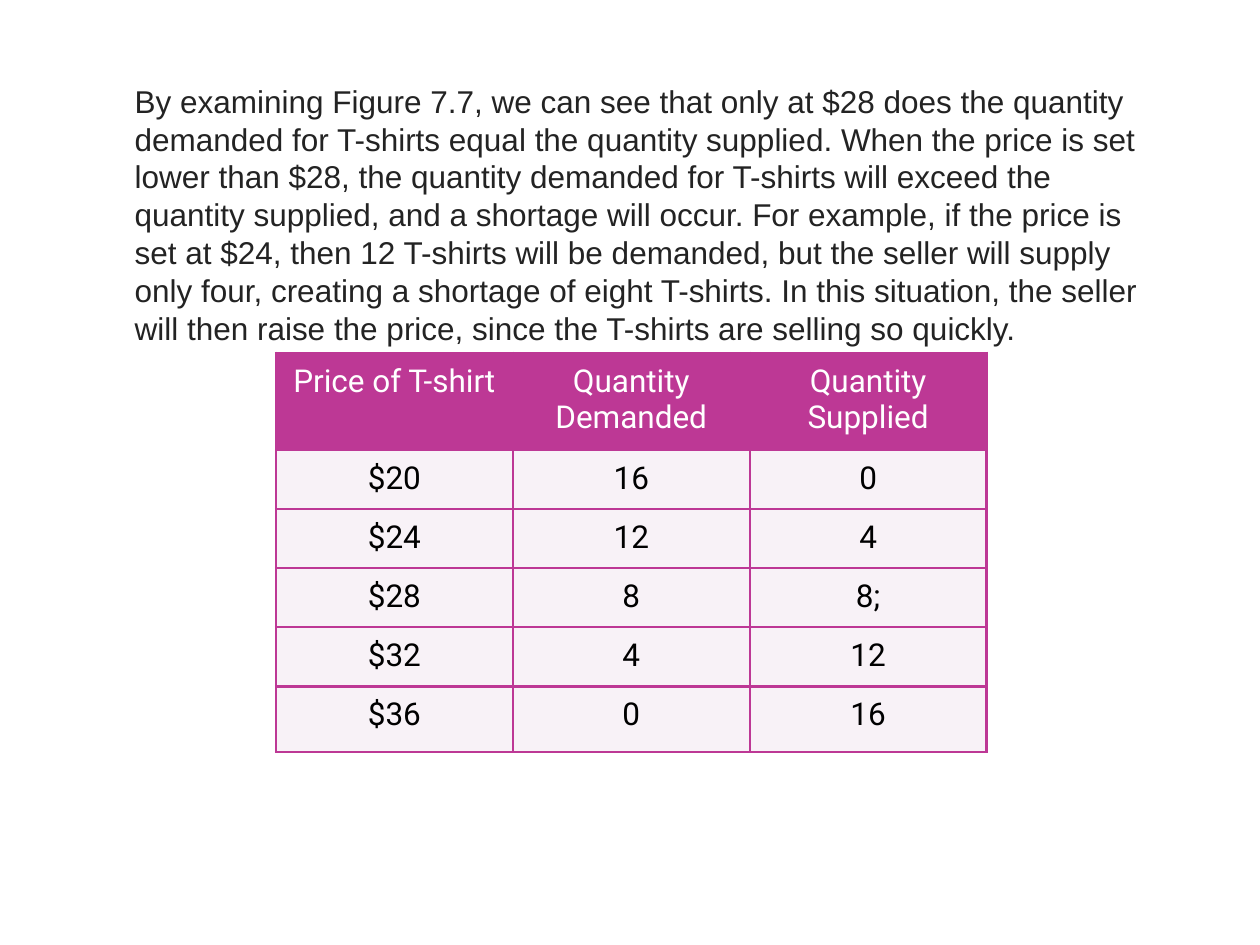
from dataclasses import dataclass

from lxml.etree import SubElement
from pptx import Presentation
from pptx.dml.color import RGBColor
from pptx.enum.text import MSO_AUTO_SIZE, PP_ALIGN
from pptx.oxml.ns import qn
from pptx.util import Inches, Pt


@dataclass(frozen=True)
class Theme:
    accent: str = "BD3895"
    cell: str = "F8F2F7"
    header_text: str = "FFFFFF"
    cell_text: str = "000000"
    body_text: str = "232323"
    body_font: str = "Arial"
    table_font: str = "Roboto"
    size: int = 18
    border: float = 1.5


THEME = Theme()

EXPLANATION = (
    "By examining Figure 7.7, we can see that only at $28 does the quantity "
    "demanded for T-shirts equal the quantity supplied. When the price is set "
    "lower than $28, the quantity demanded for T-shirts will exceed the "
    "quantity supplied, and a shortage will occur. For example, if the price is "
    "set at $24, then 12 T-shirts will be demanded, but the seller will supply "
    "only four, creating a shortage of eight T-shirts. In this situation, the "
    "seller will then raise the price, since the T-shirts are selling so quickly."
)

SCHEDULE = [
    ("Price of T-shirt", "Quantity Demanded", "Quantity Supplied"),
    ("$20", "16", "0"),
    ("$24", "12", "4"),
    ("$28", "8", "8;"),
    ("$32", "4", "12"),
    ("$36", "0", "16"),
]
COLUMN_WIDTH = 1.88
ROW_HEIGHTS = [0.77] + [0.47] * 4 + [0.52]


def style_paragraph(paragraph, font_name, color):
    paragraph.font.name = font_name
    paragraph.font.size = Pt(THEME.size)
    paragraph.font.color.rgb = RGBColor.from_string(color)


def add_explanation(slide):
    text_box = slide.shapes.add_textbox(
        Inches(0.97), Inches(0.6), Inches(8.4), Inches(5.86)
    )
    frame = text_box.text_frame
    frame.word_wrap = True
    frame.auto_size = MSO_AUTO_SIZE.SHAPE_TO_FIT_TEXT
    frame.text = EXPLANATION
    style_paragraph(frame.paragraphs[0], THEME.body_font, THEME.body_text)


def set_borders(cell):
    properties = cell._tc.get_or_add_tcPr()
    for position, side in enumerate(("a:lnL", "a:lnR", "a:lnT", "a:lnB")):
        line = SubElement(properties, qn(side), w=str(Pt(THEME.border)))
        fill = SubElement(line, qn("a:solidFill"))
        SubElement(fill, qn("a:srgbClr"), val=THEME.accent)
        properties.insert(position, line)


def format_cell(cell, text, is_header, bottom_margin):
    cell.text = text
    cell.margin_left = cell.margin_right = Inches(0.12)
    cell.margin_top = Inches(0.08)
    cell.margin_bottom = Inches(bottom_margin)
    cell.fill.solid()
    cell.fill.fore_color.rgb = RGBColor.from_string(
        THEME.accent if is_header else THEME.cell
    )
    set_borders(cell)
    paragraph = cell.text_frame.paragraphs[0]
    paragraph.alignment = PP_ALIGN.CENTER
    text_color = THEME.header_text if is_header else THEME.cell_text
    style_paragraph(paragraph, THEME.table_font, text_color)


def add_schedule(slide):
    column_count = len(SCHEDULE[0])
    table = slide.shapes.add_table(
        len(SCHEDULE), column_count, Inches(2.19), Inches(2.8),
        Inches(COLUMN_WIDTH * column_count), Inches(sum(ROW_HEIGHTS)),
    ).table
    table.horz_banding = False
    for column in table.columns:
        column.width = Inches(COLUMN_WIDTH)
    last_row = len(SCHEDULE) - 1
    for row_index, values in enumerate(SCHEDULE):
        table.rows[row_index].height = Inches(ROW_HEIGHTS[row_index])
        bottom_margin = 0.14 if row_index == last_row else 0.08
        for column_index, text in enumerate(values):
            cell = table.cell(row_index, column_index)
            format_cell(cell, text, row_index == 0, bottom_margin)
            cell.text_frame.paragraphs[0].font.bold = False


def main():
    presentation = Presentation()
    presentation.slide_width = Inches(10)
    presentation.slide_height = Inches(7.5)
    slide = presentation.slides.add_slide(presentation.slide_layouts[6])
    add_explanation(slide)
    add_schedule(slide)
    presentation.save("out.pptx")


if __name__ == "__main__":
    main()
